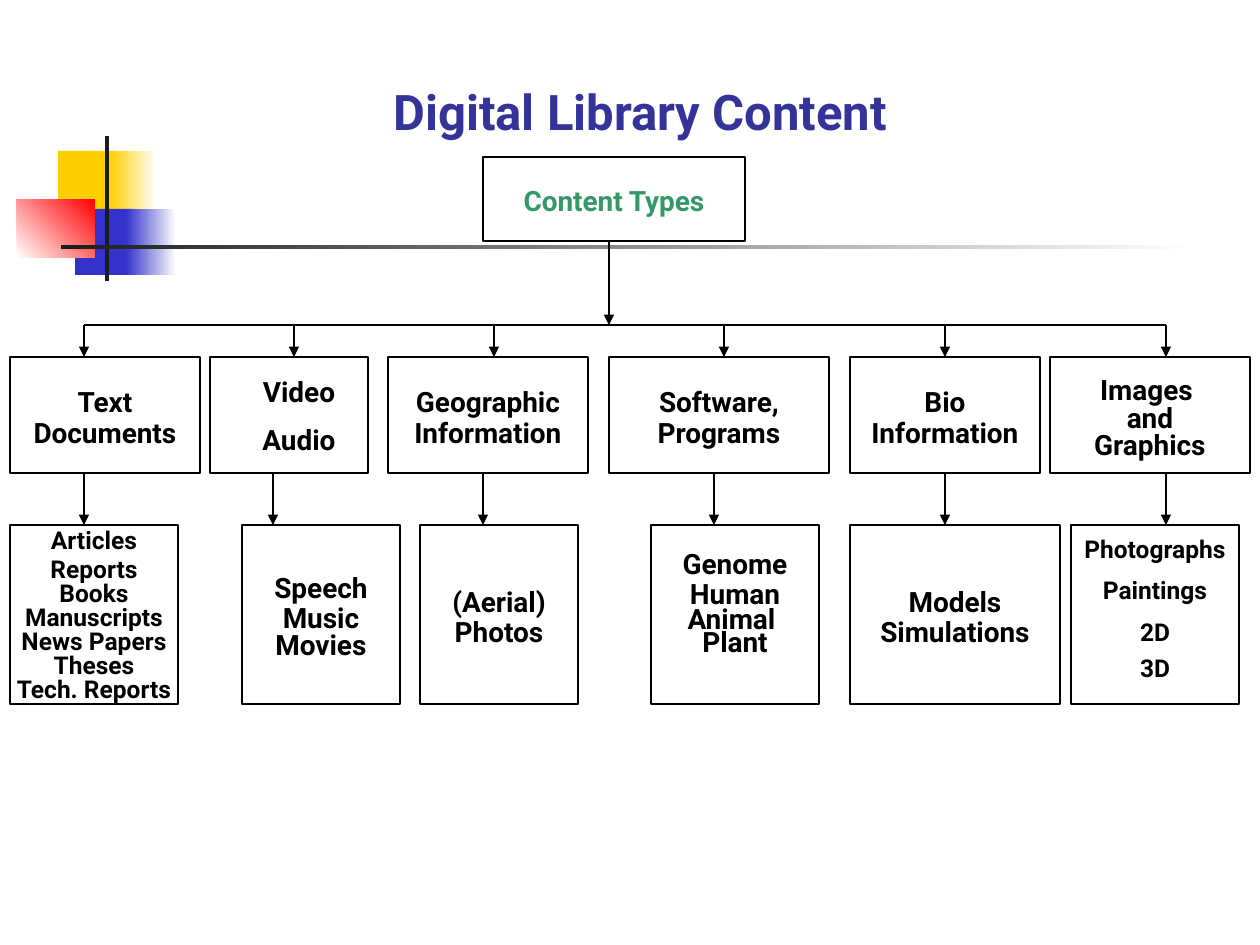
from lxml import etree
from pptx import Presentation
from pptx import util as u
from pptx.dml.color import RGBColor
from pptx.enum import shapes, text
from pptx.oxml import ns

PX = 914400 // 126
PT = 1.75  # px in one point
BLACK = RGBColor(0, 0, 0)
WHITE = RGBColor(255, 255, 255)
INK = RGBColor(0x1C, 0x1C, 0x1C)
GOLD = RGBColor(0xFF, 0xCF, 0x01)
BLUE = RGBColor(0x33, 0x33, 0xCC)
RED = RGBColor(255, 0, 0)
NAVY = RGBColor(0x33, 0x33, 0x99)
GREEN = RGBColor(0x33, 0x99, 0x66)

BUS, TOP, LOW = 325, 357, 525  # y of the bus line and of both rows
TOP_H, LOW_H = 116, 179

# left, top, width, height, colours, angle
DECOR = [
    (58, 151, 60, 66, [GOLD], 0),
    (110, 151, 46, 66, [GOLD, WHITE], 0),
    (75, 209, 58, 66, [BLUE], 0),
    (126, 209, 50, 66, [BLUE, WHITE], 0),
    (17, 199, 78, 59, [WHITE, RED], 45),
    (105, 136, 4, 145, [INK], 0),
    (61, 245, 1134, 4, [INK, WHITE], 0),
]

# arrow x, left, width, lines with the y of their middle, format
KINDS = [
    (84, 10, 190, [("Text", 401), ("Documents", 432)], {}),
    (294, 210, 158, [("Video", 391), ("Audio", 439)], {"inset": 20}),
    (494, 388, 200, [("Geographic", 401), ("Information", 432)], {}),
    (724, 609, 220, [("Software,", 401), ("Programs", 432)], {}),
    (945, 850, 190, [("Bio", 401), ("Information", 432)], {}),
    (1166, 1050, 200,
     [("Images ", 389), ("and", 417), ("Graphics", 444)], {}),
]
ITEMS = [
    (84, 10, 168,
     [("Articles", 540), ("Reports", 569), ("Books", 593),
      ("Manuscripts", 617), ("News Papers", 641), ("Theses", 665),
      ("Tech. Reports", 689)], {"size": 14}),
    (273, 242, 158, [("Speech", 587), ("Music", 617), ("Movies", 645)], {}),
    (483, 420, 158, [("(Aerial)", 601), ("Photos", 631)], {}),
    (714, 651, 168,
     [("Genome", 563), ("Human", 593), ("Animal ", 618), ("Plant", 642)], {}),
    (945, 850, 210, [("Models", 601), ("Simulations", 631)], {}),
    (1166, 1071, 168,
     [("Photographs", 549), ("Paintings", 590), ("2D", 632), ("3D", 668)],
     {"size": 14}),
]


def rect(slide, x, y, w, h, hues=(), angle=0):
    """Rectangle without a line; no, one or two fill colours."""
    box = slide.shapes.add_shape(
        shapes.MSO_SHAPE.RECTANGLE, *(v * PX for v in (x, y, w, h)))
    box.shadow.inherit = False
    box.line.fill.background()
    if len(hues) == 2:
        box.fill.gradient()
        box.fill.gradient_angle = angle
        for stop, hue in zip(box.fill.gradient_stops, hues):
            stop.color.rgb = hue
    elif hues:
        box.fill.solid()
        box.fill.fore_color.rgb = hues[0]
    else:
        box.fill.background()
    return box


def write(box, lines, size=16, hue=BLACK, inset=0):
    """Set each line so that its capitals are centred on the given y."""
    em = size * PT
    first = lines[0][1] - 0.57 * em
    frame = box.text_frame
    form = {"word_wrap": True, "vertical_anchor": text.MSO_ANCHOR.TOP,
            "margin_top": round(first * PX) - box.top,
            "margin_left": inset * PX, "margin_right": 0, "margin_bottom": 0}
    for key, val in form.items():
        setattr(frame, key, val)
    last = first - 0.03 * em - 0.57 * em + 0.6 * em
    for i, (words, mid) in enumerate(lines):
        para = frame.add_paragraph() if i else frame.paragraphs[0]
        para.alignment = text.PP_ALIGN.CENTER
        pitch = mid - lines[i - 1][1] if i else mid + 0.6 * em - first
        para.line_spacing = u.Pt(round(pitch / PT, 1))
        run = para.add_run()
        run.text = words
        font = {"name": "Roboto", "size": u.Pt(size), "bold": True}
        for key, val in font.items():
            setattr(run.font, key, val)
        run.font.color.rgb = hue


def node(slide, x, y, w, h, lines, **form):
    box = rect(slide, x, y, w, h)
    box.line.color.rgb = BLACK
    box.line.width = u.Pt(0.75)
    write(box, lines, **form)
    return box


def line(slide, x, y, x2, y2, head=True):
    link = slide.shapes.add_connector(
        shapes.MSO_CONNECTOR.STRAIGHT, *(v * PX for v in (x, y, x2, y2)))
    link.line.color.rgb = BLACK
    link.line.width = u.Pt(0.75)
    if head:
        etree.SubElement(link.line._get_or_add_ln(), ns.qn("a:tailEnd"),
                         type="triangle")
    etree.SubElement(link._element.spPr, ns.qn("a:effectLst"))
    return link


def centred(box, x):
    return box.left + box.width // 2 == x * PX


def main():
    deck = Presentation()
    deck.slide_width, deck.slide_height = u.Inches(10), u.Inches(7.5)
    slide = deck.slides.add_slide(deck.slide_layouts[6])

    # Corner ornament and rule
    for part in DECOR:
        rect(slide, *part)

    # Title and root
    title = rect(slide, 262, 73, 756, 72, [WHITE])
    write(title, [("Digital Library Content", 111)], size=28, hue=NAVY)
    node(slide, 483, 157, 262, 84, [("Content Types", 200)], hue=GREEN)

    # Both rows of boxes
    kinds = [node(slide, x, TOP, w, TOP_H, lines, **form)
             for _, x, w, lines, form in KINDS]
    items = [node(slide, x, LOW, w, LOW_H, lines, **form)
             for _, x, w, lines, form in ITEMS]

    # Bus line and arrows
    line(slide, KINDS[0][0], BUS, KINDS[-1][0], BUS, head=False)
    line(slide, 609, 241, 609, BUS)
    for (x, *_), kind in zip(KINDS, kinds):
        link = line(slide, x, BUS, x, TOP)
        if centred(kind, x):
            link.end_connect(kind, 0)
    for (x, *_), kind, item in zip(ITEMS, kinds, items):
        link = line(slide, x, TOP + TOP_H, x, LOW)
        if centred(kind, x):
            link.begin_connect(kind, 2)
        if centred(item, x):
            link.end_connect(item, 0)

    deck.save("out.pptx")


if __name__ == "__main__":
    main()
